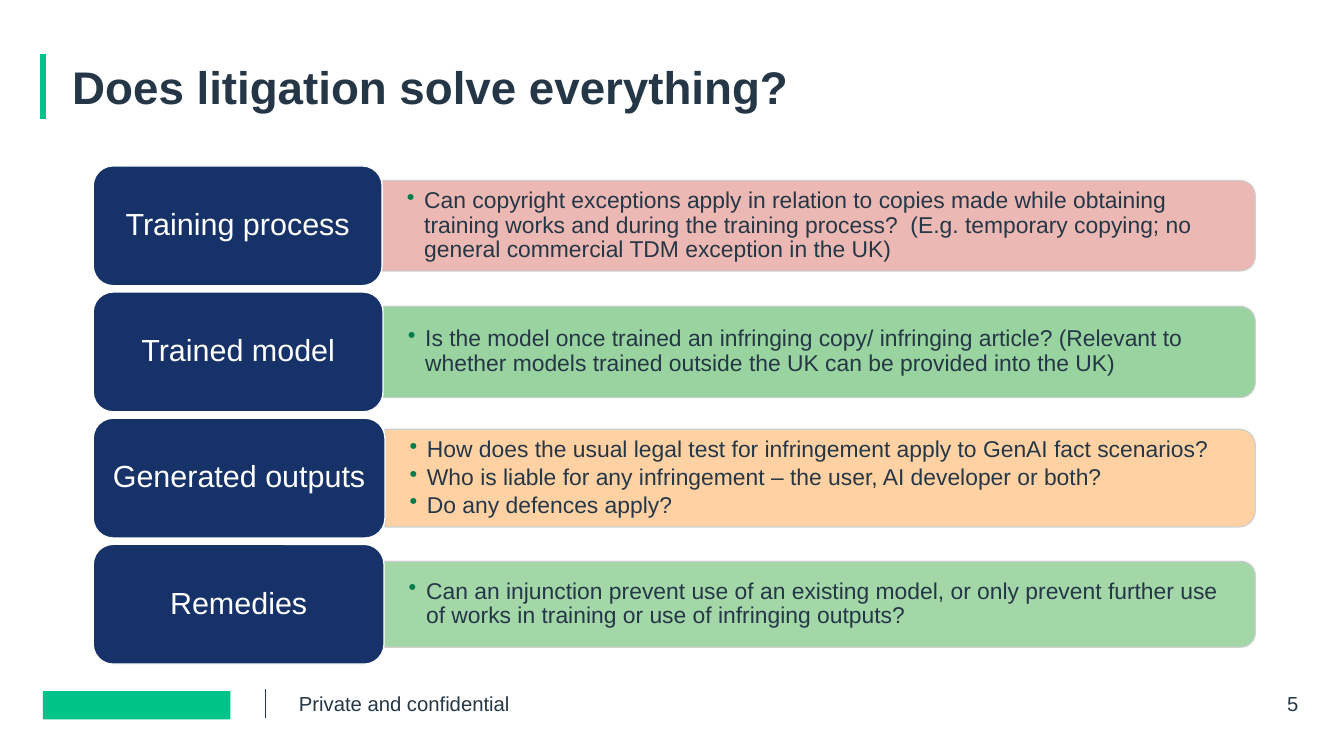
from dataclasses import dataclass

from lxml.etree import SubElement
from pptx import Presentation
from pptx.dml.color import RGBColor
from pptx.enum.shapes import MSO_CONNECTOR, MSO_SHAPE
from pptx.enum.text import MSO_ANCHOR, PP_ALIGN
from pptx.oxml.ns import qn
from pptx.util import Inches, Pt


@dataclass(frozen=True)
class Theme:
    """Colours, font and type sizes of the slide."""
    font: str = "Arial"
    ink: str = "253746"
    brand: str = "00C389"
    navy: str = "163268"
    white: str = "FFFFFF"
    outline: str = "CCCDD0"
    bullet: str = "007B4B"
    pink: str = "EBB1AB"
    green: str = "99D39F"
    orange: str = "FFCC99"
    title_size: int = 36
    label_size: int = 24
    body_size: int = 18
    footer_size: int = 16


class SlideBuilder:
    """Draws styled elements on one slide."""

    def __init__(self, slide, theme):
        """Keep the slide and its theme."""
        self.slide = slide
        self.theme = theme

    def styled_run(self, paragraph, text, size, color, bold=False):
        """Add one styled run to a paragraph."""
        run = paragraph.add_run()
        run.text = text
        run.font.name = self.theme.font
        run.font.size = Pt(size)
        run.font.bold = bold
        run.font.color.rgb = RGBColor.from_string(color)

    def frame(self, shape, anchor, side=0, edge=0):
        """Set wrapping, anchor and margins of a text frame."""
        frame = shape.text_frame
        frame.word_wrap = True
        frame.vertical_anchor = anchor
        frame.margin_left = frame.margin_right = Inches(side)
        frame.margin_top = frame.margin_bottom = Inches(edge)
        return frame

    def title(self, text, left, top, width, height):
        """Place and fill the title placeholder."""
        title = self.slide.shapes.title
        title.left, title.top = Inches(left), Inches(top)
        title.width, title.height = Inches(width), Inches(height)
        heading = self.frame(title, MSO_ANCHOR.TOP).paragraphs[0]
        heading.alignment = PP_ALIGN.LEFT
        heading.line_spacing = 0.9
        self.styled_run(heading, text, self.theme.title_size, self.theme.ink, True)

    def rule(self, x, top, bottom, color, weight):
        """Draw a vertical line."""
        line = self.slide.shapes.add_connector(
            MSO_CONNECTOR.STRAIGHT, Inches(x), Inches(top), Inches(x), Inches(bottom))
        line.line.color.rgb = RGBColor.from_string(color)
        line.line.width = Pt(weight)
        SubElement(line._element.spPr, qn("a:effectLst"))

    def block(self, kind, left, top, width, height, fill, outline=None):
        """Draw a filled preset shape."""
        shape = self.slide.shapes.add_shape(
            kind, Inches(left), Inches(top), Inches(width), Inches(height))
        shape.shadow.inherit = False
        shape.fill.solid()
        shape.fill.fore_color.rgb = RGBColor.from_string(fill)
        if outline:
            shape.line.color.rgb = RGBColor.from_string(outline)
            shape.line.width = Pt(1)
        else:
            shape.line.fill.background()
        return shape

    def footer(self, text, left, width, align):
        """Add a footer text."""
        box = self.slide.shapes.add_textbox(
            Inches(left), Inches(7.6), Inches(width), Inches(0.2))
        paragraph = self.frame(box, MSO_ANCHOR.MIDDLE).paragraphs[0]
        paragraph.alignment = align
        self.styled_run(paragraph, text, self.theme.footer_size, self.theme.ink)

    def label(self, text, left, middle, width, height):
        """Draw the dark stage label with its text."""
        shape = self.block(MSO_SHAPE.ROUNDED_RECTANGLE, left, middle - height / 2,
                           width, height, self.theme.navy, self.theme.white)
        paragraph = self.frame(shape, MSO_ANCHOR.MIDDLE, 0.1, 0.05).paragraphs[0]
        paragraph.alignment = PP_ALIGN.CENTER
        paragraph.line_spacing = 0.9
        self.styled_run(paragraph, text, self.theme.label_size, self.theme.white)

    def bar(self, left, right, middle, height, fill, opacity):
        """Draw the tinted bar, rounded on its right end."""
        length = right - left
        shape = self.block(MSO_SHAPE.ROUND_2_SAME_RECTANGLE,
                           (left + right - height) / 2, middle - length / 2,
                           height, length, fill, self.theme.outline)
        shape.rotation = 90
        colors = shape._element.spPr.iter(qn("a:srgbClr"))
        for color, percent in zip(colors, (opacity, 90)):
            SubElement(color, qn("a:alpha")).set("val", str(percent * 1000))

    def questions(self, texts, left, right, middle, height):
        """Add the bulleted questions over a bar."""
        box = self.slide.shapes.add_textbox(
            Inches(left), Inches(middle - height / 2),
            Inches(right - left), Inches(height))
        frame = self.frame(box, MSO_ANCHOR.MIDDLE, 0.27, 0.14)
        for index, text in enumerate(texts):
            paragraph = frame.add_paragraph() if index else frame.paragraphs[0]
            paragraph.level = 1
            paragraph.line_spacing = 0.9
            paragraph.space_after = Pt(2.5)
            properties = paragraph._p.get_or_add_pPr()
            properties.set("marL", str(Inches(0.19)))
            properties.set("indent", str(-Inches(0.19)))
            tint = SubElement(properties, qn("a:buClr"))
            SubElement(tint, qn("a:srgbClr")).set("val", self.theme.bullet)
            SubElement(properties, qn("a:buChar")).set("char", "•")
            self.styled_run(paragraph, text, self.theme.body_size, self.theme.ink)


def main():
    """Build and save the slide."""
    theme = Theme()
    deck = Presentation()
    deck.slide_width, deck.slide_height = Inches(14.7), Inches(8.27)
    page = SlideBuilder(deck.slides.add_slide(deck.slide_layouts[5]), theme)

    page.rule(2.9, 7.54, 7.86, theme.ink, 0.5)
    page.block(MSO_SHAPE.RECTANGLE, 0.47, 7.56, 2.05, 0.31, theme.brand)
    page.rule(0.47, 0.59, 1.3, theme.brand, 5)
    page.footer("5", 13.46, 0.74, PP_ALIGN.RIGHT)
    page.footer("Private and confidential", 3.27, 8.36, PP_ALIGN.LEFT)
    page.title("Does litigation solve everything?", 0.79, 0.71, 13.11, 0.55)

    stages = [
        ("Training process", 3.16, 0.99, theme.pink, 90, [
            "Can copyright exceptions apply in relation to copies made while "
            "obtaining training works and during the training process?  (E.g. "
            "temporary copying; no general commercial TDM exception in the UK)"]),
        ("Trained model", 3.17, 1, theme.green, 100, [
            "Is the model once trained an infringing copy/ infringing article? "
            "(Relevant to whether models trained outside the UK can be provided "
            "into the UK)"]),
        ("Generated outputs", 3.19, 1.07, theme.orange, 90, [
            "How does the usual legal test for infringement apply to GenAI fact "
            "scenarios?",
            "Who is liable for any infringement – the user, AI developer or both?",
            "Do any defences apply?"]),
        ("Remedies", 3.18, 0.94, theme.green, 90, [
            "Can an injunction prevent use of an existing model, or only prevent "
            "further use of works in training or use of infringing outputs?"]),
    ]
    label_left, bar_right = 1.02, 13.73
    for row, (name, label_width, height, fill, opacity, texts) in enumerate(stages):
        middle = 2.47 + 1.38 * row
        bar_left = label_left + label_width
        page.bar(bar_left, bar_right, middle, height, fill, opacity)
        page.questions(texts, bar_left, bar_right - 0.05, middle, height - 0.1)
        page.label(name, label_left, middle, label_width, 1.31)

    deck.save("out.pptx")


if __name__ == "__main__":
    main()
